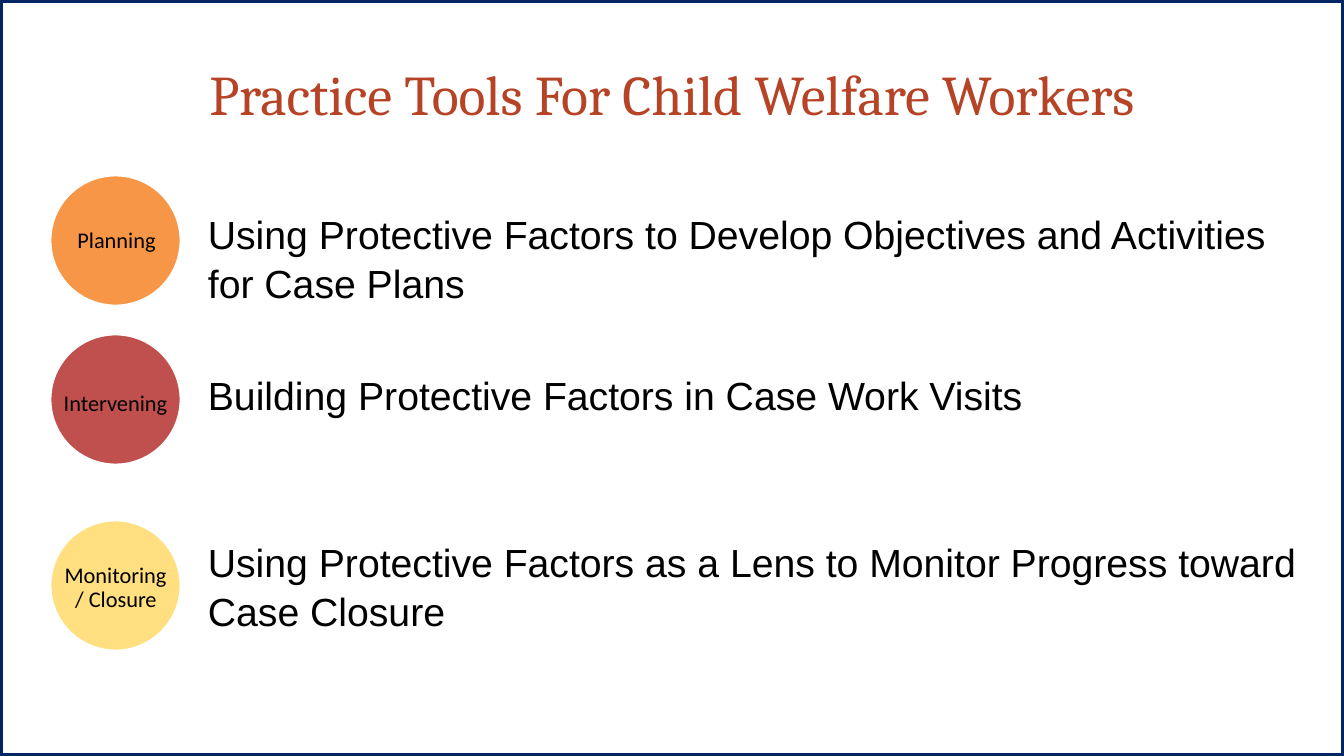
import pptx
import pptx.util
from lxml import etree
from pptx.dml.color import RGBColor
from pptx.enum.shapes import MSO_SHAPE
from pptx.enum.text import MSO_ANCHOR, PP_ALIGN
from pptx.oxml.ns import qn

SCALE = 914400 / 100.8
HUES = {
    "navy": "002663", "rust": "B64326", "black": "000000", "white": "FFFFFF",
    "orange": "F79646", "red": "C0504D", "gold": "FFC000",
}
DISC = 131
# name, hue, opacity in percent, disc top, label left, top and width
STAGES = [
    ("Planning", "orange", 100, 175, 70, 195, 93),
    ("Intervening", "red", 100, 334, 50, 358, 131),
    ("Monitoring/ Closure", "gold", 50, 520, 60, 542, 112),
]
# wording, space before in points
TOOLS = [
    ("Using Protective Factors to Develop Objectives and Activities for Case Plans", 0),
    ("Building Protective Factors in Case Work Visits", 45),
    ("Using Protective Factors as a Lens to Monitor Progress toward Case Closure", 84),
]


def emu(px):
    return pptx.util.Emu(round(px * SCALE))


class Board:
    def __init__(self, deck):
        self.slide = deck.slides.add_slide(deck.slide_layouts[5])
        self.shapes = self.slide.shapes

    def color(self, name):
        return RGBColor.from_string(HUES[name])

    def style(self, para, face, size, hue, align):
        para.alignment = align
        for run in para.runs:
            run.font.name = face
            run.font.size = pptx.util.Pt(size)
            run.font.color.rgb = self.color(hue)

    def shape(self, kind, box, line, width, fill=None, alpha=100):
        item = self.shapes.add_shape(kind, *map(emu, box))
        item.shadow.inherit = False
        item.line.color.rgb = self.color(line)
        item.line.width = pptx.util.Pt(width)
        if fill is None:
            item.fill.background()
            return
        item.fill.solid()
        item.fill.fore_color.rgb = self.color(fill)
        if alpha < 100:
            tint = item.fill._xPr.find(qn("a:solidFill"))[0]
            etree.SubElement(tint, qn("a:alpha"), val=str(alpha * 1000))

    def title(self, text, box):
        item = self.shapes.title
        item.left, item.top, item.width, item.height = map(emu, box)
        frame = item.text_frame
        frame.text = text
        frame.vertical_anchor = MSO_ANCHOR.MIDDLE
        self.style(frame.paragraphs[0], "Cambria", 40, "rust", PP_ALIGN.CENTER)

    def frame(self, box):
        frame = self.shapes.add_textbox(*map(emu, box)).text_frame
        frame.word_wrap = True
        return frame

    def label(self, text, box):
        frame = self.frame(box)
        frame.margin_left = frame.margin_right = emu(2)
        frame.margin_top = frame.margin_bottom = emu(2)
        frame.vertical_anchor = MSO_ANCHOR.MIDDLE
        frame.text = text
        para = frame.paragraphs[0]
        para.line_spacing = 0.9
        self.style(para, "Calibri", 16, "black", PP_ALIGN.CENTER)

    def body(self, items, box):
        frame = self.frame(box)
        for i, (text, gap) in enumerate(items):
            para = frame.add_paragraph() if i else frame.paragraphs[0]
            para.text = text
            para.line_spacing = 1.04
            if gap:
                para.space_before = pptx.util.Pt(gap)
            self.style(para, "Arial", 28, "black", PP_ALIGN.LEFT)


def main():
    deck = pptx.Presentation()
    deck.slide_width, deck.slide_height = emu(1344), emu(756)
    board = Board(deck)
    board.shape(MSO_SHAPE.RECTANGLE, (0, 0, 1344, 756), "navy", 4.5)
    board.title("Practice Tools For Child Welfare Workers", (67, 30, 1210, 126))
    board.body(TOOLS, (198, 204, 1117, 466))
    for name, hue, alpha, top, left, high, wide in STAGES:
        board.shape(MSO_SHAPE.OVAL, (50, top, DISC, DISC), "white", 2, hue, alpha)
        board.label(name, (left, high, wide, 93))
    deck.save("out.pptx")


if __name__ == "__main__":
    main()
